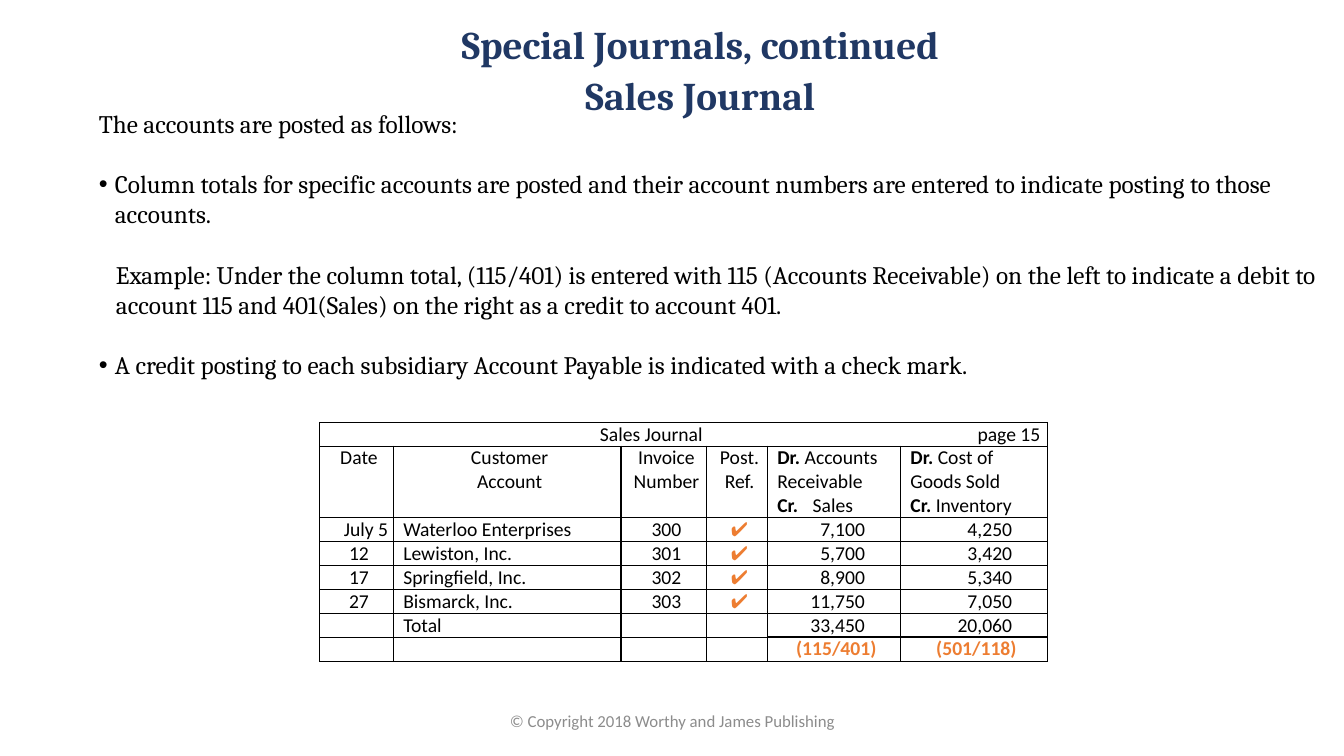
from lxml import etree
from pptx import Presentation
from pptx.dml.color import RGBColor
from pptx.enum.shapes import MSO_CONNECTOR
from pptx.enum.text import MSO_ANCHOR, MSO_AUTO_SIZE, PP_ALIGN
from pptx.oxml.ns import qn
from pptx.util import Inches, Pt

LEFT, CENTER, RIGHT = PP_ALIGN.LEFT, PP_ALIGN.CENTER, PP_ALIGN.RIGHT
TOP, MIDDLE = MSO_ANCHOR.TOP, MSO_ANCHOR.MIDDLE
STRAIGHT = MSO_CONNECTOR.STRAIGHT
NO_AUTOFIT = MSO_AUTO_SIZE.NONE

COLORS = {"text": "000000", "title": "203864", "posting": "ED7D31", "footer": "8C8C8C"}
HEADING_FONT, TABLE_FONT = "Cambria", "Calibri"

BODY = [
    ("The accounts are posted as follows:", 0, False),
    ("Column totals for specific accounts are posted and their account numbers "
     "are entered to indicate posting to those accounts.", 0.16, True),
    ("Example: Under the column total, (115/401) is entered with 115 (Accounts "
     "Receivable) on the left to indicate a debit to account 115 and 401(Sales) "
     "on the right as a credit to account 401.", 0.17, False),
    ("A credit posting to each subsidiary Account Payable is indicated with a "
     "check mark.", 0.16, True),
]
COLUMN_WIDTHS = [0.73, 2.26, 0.85, 0.6, 1.32, 1.46]
COLUMN_ALIGNMENTS = [CENTER, LEFT, CENTER, CENTER, RIGHT, RIGHT]
HEADERS = [
    [[("Date", False)]],
    [[("Customer", False)], [("Account", False)]],
    [[("Invoice Number", False)]],
    [[("Post.", False)], [("Ref.", False)]],
    [[("Dr. ", True), ("Accounts Receivable", False)], [("Cr.", True), ("\tSales", False)]],
    [[("Dr. ", True), ("Cost of Goods Sold", False)], [("Cr. ", True), ("Inventory", False)]],
]
ENTRIES = [
    ["July 5", "Waterloo Enterprises", "300", "✔", "7,100", "4,250"],
    ["12", "Lewiston, Inc.", "301", "✔", "5,700", "3,420"],
    ["17", "Springfield, Inc.", "302", "✔", "8,900", "5,340"],
    ["27", "Bismarck, Inc.", "303", "✔", "11,750", "7,050"],
    ["", "Total", "", "", "33,450", "20,060"],
    ["", "", "", "", "(115/401)", "(501/118)"],
]


class SlideBuilder:
    """Hold the text style and the current slide, and add its elements."""

    def __init__(self, presentation):
        self.slide = presentation.slides.add_slide(presentation.slide_layouts[1])

    def place(self, shape, left, top, width, height, anchor=TOP):
        shape.left, shape.top = Inches(left), Inches(top)
        shape.width, shape.height = Inches(width), Inches(height)
        frame = shape.text_frame
        frame.word_wrap = True
        frame.auto_size = NO_AUTOFIT
        frame.vertical_anchor = anchor
        return frame

    def paragraph(self, frame, index):
        return frame.add_paragraph() if index else frame.paragraphs[0]

    def add_runs(self, paragraph, runs, size, font, color, alignment=LEFT, before=0):
        paragraph.alignment = alignment
        paragraph.line_spacing = 1.0
        paragraph.space_before = Pt(before)
        for text, bold in runs:
            run = paragraph.add_run()
            run.text = text
            run.font.name, run.font.size, run.font.bold = font, Pt(size), bold
            run.font.color.rgb = RGBColor.from_string(COLORS[color])

    def tabs(self, paragraph, stops):
        tab_list = etree.SubElement(paragraph._p.get_or_add_pPr(), qn("a:tabLst"))
        for position, alignment in stops:
            etree.SubElement(tab_list, qn("a:tab"), pos=str(Inches(position)), algn=alignment)

    def title(self, lines):
        frame = self.place(self.slide.shapes.title, 3.61, 0.15, 6.67, 1.09)
        for index, line in enumerate(lines):
            self.add_runs(self.paragraph(frame, index), [(line, True)], 28, HEADING_FONT,
                          "title", CENTER, 3 if index else 0)

    def body(self, items):
        frame = self.place(self.slide.placeholders[1], 0.88, 1.02, 12.46, 3.74)
        for index, (text, indent, bulleted) in enumerate(items):
            paragraph = self.paragraph(frame, index)
            properties = paragraph._p.get_or_add_pPr()
            properties.set("marL", str(Inches(indent)))
            properties.set("indent", str(Inches(-indent if bulleted else 0)))
            if bulleted:
                etree.SubElement(properties, qn("a:buChar"), char="•")
            else:
                etree.SubElement(properties, qn("a:buNone"))
            self.add_runs(paragraph, [(text, False)], 18, HEADING_FONT, "text",
                          before=21.6 if index else 0)

    def footer(self, text):
        box = self.slide.shapes.add_textbox(0, 0, 0, 0)
        frame = self.place(box, 4.42, 6.95, 4.5, 0.4, MIDDLE)
        self.add_runs(frame.paragraphs[0], [(text, False)], 12, TABLE_FONT, "footer", CENTER)

    def format_cell(self, cell):
        cell.margin_left, cell.margin_right = Inches(0.1), Inches(0.05)
        cell.margin_top = cell.margin_bottom = 0
        cell.fill.background()
        properties = cell._tc.get_or_add_tcPr()
        for index, side in enumerate(("lnL", "lnR", "lnT", "lnB")):
            border = etree.Element(qn(f"a:{side}"), w=str(Pt(1)))
            fill = etree.SubElement(border, qn("a:solidFill"))
            etree.SubElement(fill, qn("a:srgbClr"), val=COLORS["text"])
            properties.insert(index, border)

    def cell_text(self, cell, runs, alignment, color="text", index=0):
        paragraph = self.paragraph(cell.text_frame, index)
        if any("\t" in text for text, bold in runs):
            self.tabs(paragraph, [(0.35, "l")])
        self.add_runs(paragraph, runs, 14, TABLE_FONT, color, alignment)

    def journal(self):
        row_heights = [0.23, 0.7] + [0.23] * len(ENTRIES)
        frame = self.slide.shapes.add_table(
            len(row_heights), len(COLUMN_WIDTHS), Inches(3.17), Inches(4.19),
            Inches(sum(COLUMN_WIDTHS)), Inches(sum(row_heights)))
        table = frame.table
        table.first_row = table.horz_banding = False
        for column, width in zip(table.columns, COLUMN_WIDTHS):
            column.width = Inches(width)
        for row, height in zip(table.rows, row_heights):
            row.height = Inches(height)
        for cell in table.iter_cells():
            self.format_cell(cell)

        heading = table.cell(0, 0)
        heading.merge(table.cell(0, len(COLUMN_WIDTHS) - 1))
        paragraph = heading.text_frame.paragraphs[0]
        self.tabs(paragraph, [(2.68, "l"), (7.05, "r")])
        self.add_runs(paragraph, [("\tSales Journal\tpage 15", False)], 14, TABLE_FONT, "text")

        for column, lines in enumerate(HEADERS):
            cell = table.cell(1, column)
            alignment = LEFT if column > 3 else CENTER
            if column > 3:
                cell.margin_right = Inches(0.15)
            for index, runs in enumerate(lines):
                self.cell_text(cell, runs, alignment, index=index)

        for row, entry in enumerate(ENTRIES, start=2):
            for column, text in enumerate(entry):
                self.entry(table.cell(row, column), text, COLUMN_ALIGNMENTS[column])

    def entry(self, cell, text, alignment):
        if not text:
            etree.SubElement(cell.text_frame.paragraphs[0]._p, qn("a:endParaRPr"), sz="1400")
            return
        posting = text == "✔" or text.startswith("(")
        if posting:
            alignment = CENTER
        elif text.startswith("July"):
            alignment = RIGHT
        elif alignment == RIGHT:
            cell.margin_right = Inches(0.35)
        self.cell_text(cell, [(text, posting)], alignment, "posting" if posting else "text")

    def total_rule(self):
        line = self.slide.shapes.add_connector(
            STRAIGHT, Inches(7.62), Inches(6.31), Inches(10.38), Inches(6.31))
        line.line.width = Pt(0.5)
        line.line.color.rgb = RGBColor.from_string(COLORS["text"])
        etree.SubElement(line._element.spPr, qn("a:effectLst"))


def main():
    presentation = Presentation()
    presentation.slide_width, presentation.slide_height = Inches(13.33), Inches(7.5)
    builder = SlideBuilder(presentation)
    builder.footer("© Copyright 2018 Worthy and James Publishing")
    builder.title(["Special Journals, continued", "Sales Journal"])
    builder.body(BODY)
    builder.journal()
    builder.total_rule()
    presentation.save("out.pptx")


if __name__ == "__main__":
    main()
